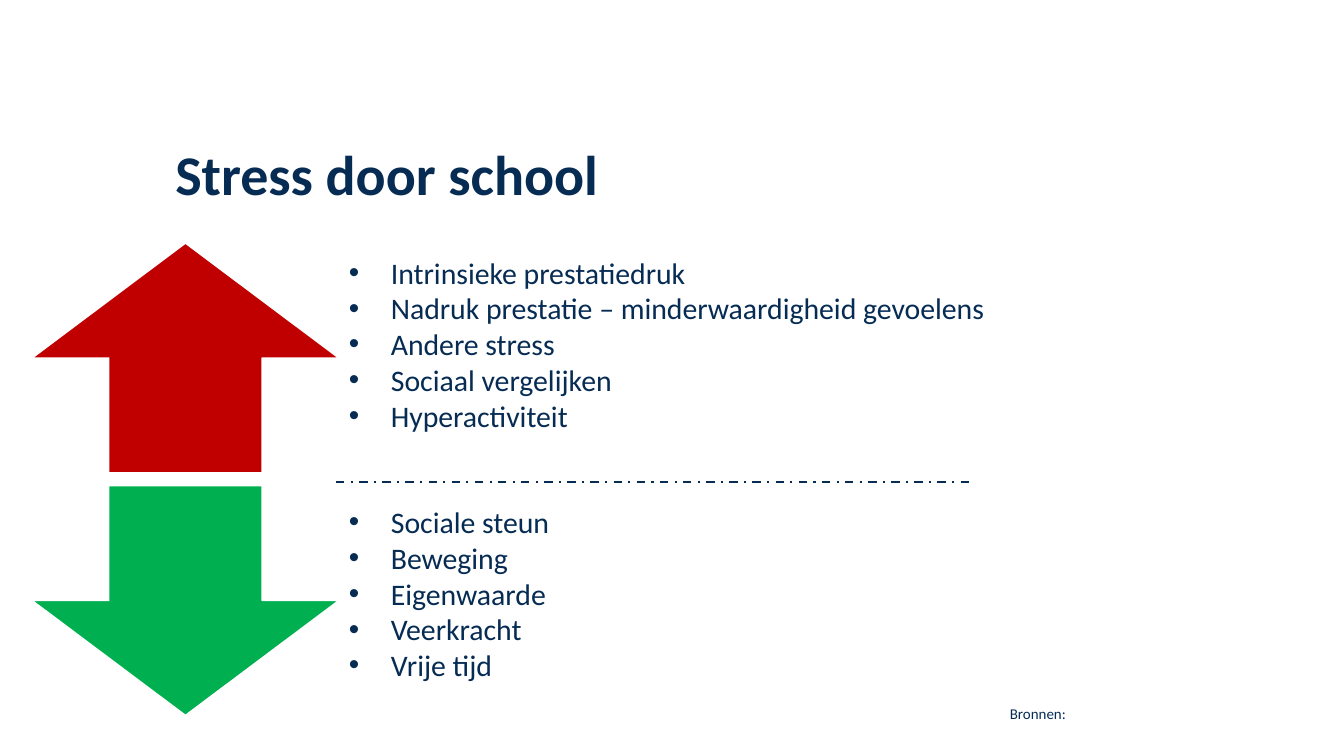
from lxml import etree
from pptx import Presentation
from pptx.dml.color import RGBColor
from pptx.enum.dml import MSO_LINE
from pptx.enum.shapes import MSO_CONNECTOR, MSO_SHAPE
from pptx.enum.text import MSO_ANCHOR, MSO_AUTO_SIZE, PP_ALIGN
from pptx.oxml.ns import qn
from pptx.util import Pt

STRAIGHT = MSO_CONNECTOR.STRAIGHT
UP_ARROW, DOWN_ARROW = MSO_SHAPE.UP_ARROW, MSO_SHAPE.DOWN_ARROW
DASH_DOT = MSO_LINE.DASH_DOT
TOP, MIDDLE = MSO_ANCHOR.TOP, MSO_ANCHOR.MIDDLE
LEFT = PP_ALIGN.LEFT
NO_AUTOFIT = MSO_AUTO_SIZE.NONE

COLORS = {name: RGBColor.from_string(value) for name, value in {
    "navy": "072C54", "red": "C00000", "green": "00B050", "white": "FFFFFF",
}.items()}
INDENT = 30


def place(shape, left, top, width, height):
    shape.left, shape.top = Pt(left), Pt(top)
    shape.width, shape.height = Pt(width), Pt(height)


def write_lines(shape, lines, size, anchor=TOP, bold=False, line_spacing=1.0):
    """Fill the shape with one left-aligned paragraph per line."""
    frame = shape.text_frame
    frame.text = "\n".join(lines)
    frame_format = {"word_wrap": True, "auto_size": NO_AUTOFIT, "vertical_anchor": anchor}
    for name, value in frame_format.items():
        setattr(frame, name, value)
    paragraph_format = {"alignment": LEFT, "line_spacing": line_spacing,
                        "space_before": Pt(0), "space_after": Pt(0)}
    font_format = {"name": "Calibri", "size": Pt(size), "bold": bold}
    for paragraph in frame.paragraphs:
        for name, value in paragraph_format.items():
            setattr(paragraph, name, value)
        font = paragraph.runs[0].font
        for name, value in font_format.items():
            setattr(font, name, value)
        font.color.rgb = COLORS["navy"]


presentation = Presentation()
presentation.slide_width, presentation.slide_height = Pt(960), Pt(540)
slide = presentation.slides.add_slide(presentation.slide_layouts.get_by_name("Two Content"))
title, stressors_body, buffers_body = slide.placeholders

# Title
place(title, 118, 100, 803.5, 54.7)
write_lines(title, ["Stress door school"], 40, MIDDLE, True, Pt(40))

# Arrows: stress goes up or down
for preset, color, top in [(UP_ARROW, "red", 173.7), (DOWN_ARROW, "green", 347)]:
    arrow = slide.shapes.add_shape(preset, Pt(23), Pt(top), Pt(219), Pt(164))
    arrow.shadow.inherit = False
    arrow.fill.solid()
    arrow.fill.fore_color.rgb = COLORS[color]
    arrow.line.color.rgb = COLORS["white"]
    arrow.line.width = Pt(1)

# Bulleted lists beside the arrows
lists = [
    (stressors_body, 178, 513.5, [
        "Intrinsieke prestatiedruk",
        "Nadruk prestatie – minderwaardigheid gevoelens",
        "Andere stress",
        "Sociaal vergelijken",
        "Hyperactiviteit",
    ]),
    (buffers_body, 356.2, 189.5, [
        "Sociale steun",
        "Beweging",
        "Eigenwaarde",
        "Veerkracht",
        "Vrije tijd",
    ]),
]
for body, top, width, lines in lists:
    place(body, 242, top, width, 137)
    write_lines(body, lines, 21.3)
    for paragraph in body.text_frame.paragraphs:
        properties = paragraph._p.get_or_add_pPr()
        properties.set("marL", str(Pt(INDENT)))
        properties.set("indent", str(Pt(-INDENT)))
        etree.SubElement(properties, qn("a:buFont"), typeface="Arial")
        etree.SubElement(properties, qn("a:buChar"), char="•")

# Divider between the lists
divider = slide.shapes.add_connector(STRAIGHT, Pt(240), Pt(344.2), Pt(696), Pt(344.2))
divider.line.color.rgb = COLORS["navy"]
divider.line.width = Pt(1.5)
divider.line.dash_style = DASH_DOT
etree.SubElement(divider._element.spPr, qn("a:effectLst"))

# Sources label
sources = slide.shapes.add_textbox(Pt(714.3), Pt(499.7), Pt(62.6), Pt(20))
write_lines(sources, ["Bronnen:"], 10.7)

presentation.save("out.pptx")
